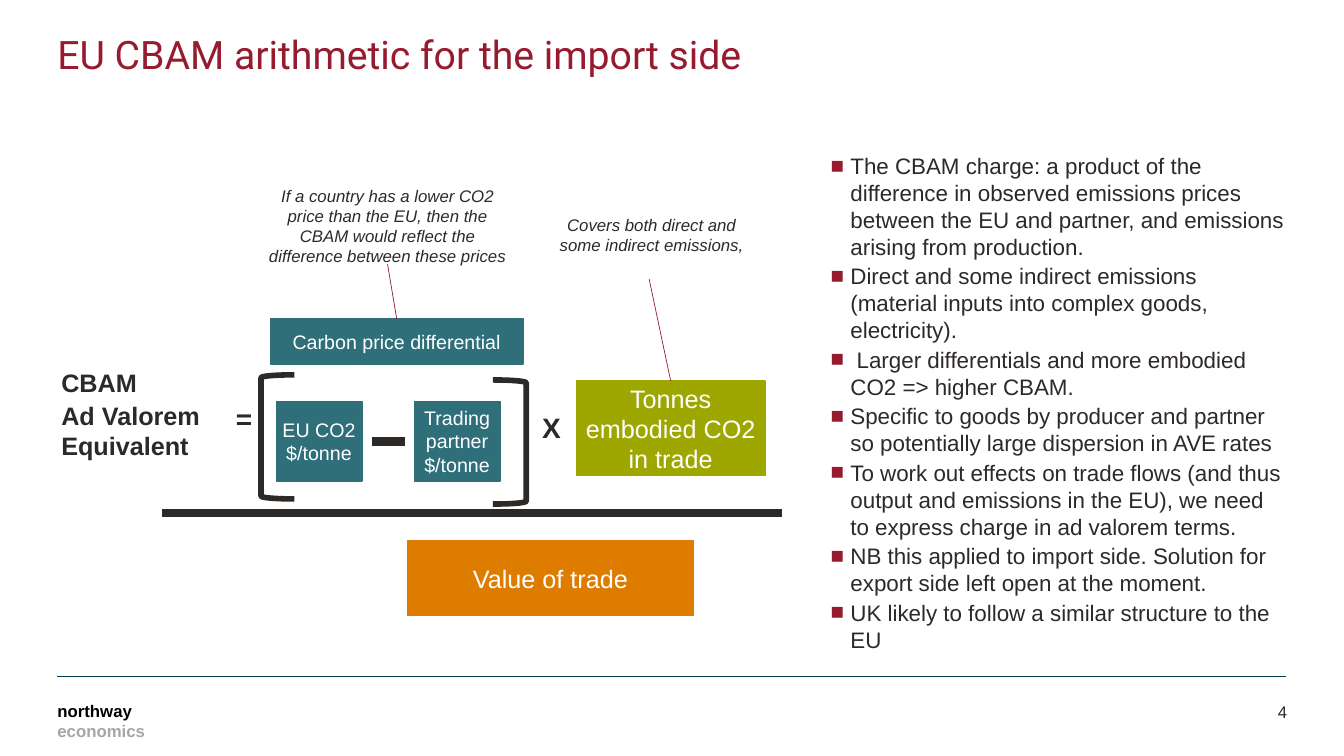
from lxml.etree import SubElement
from pptx import Presentation
from pptx.dml.color import RGBColor
from pptx.enum.shapes import MSO_CONNECTOR, MSO_SHAPE
from pptx.enum.text import MSO_ANCHOR, MSO_AUTO_SIZE, PP_ALIGN
from pptx.oxml.ns import qn
from pptx.util import Pt

COLORS = {
    "ink": "2D2926", "red": "971B2F", "teal": "2F6F7A", "green": "9EA700",
    "orange": "DE7C00", "white": "FFFFFF", "footer": "003D4C",
    "black": "000000", "grey": "A6A6A6",
}
TITLE = "EU CBAM arithmetic for the import side"
BULLETS = [
    "The CBAM charge: a product of the difference in observed emissions prices "
    "between the EU and partner, and emissions arising from production.",
    "Direct and some indirect emissions (material inputs into complex goods, electricity).",
    " Larger differentials and more embodied CO2 => higher CBAM.",
    "Specific to goods by producer and partner so potentially large dispersion in AVE rates",
    "To work out effects on trade flows (and thus output and emissions in the EU), "
    "we need to express charge in ad valorem terms.",
    "NB this applied to import side. Solution for export side left open at the moment.",
    "UK likely to follow a similar structure to the EU",
]
# name: (text, color, size, (left, top, width, height))
BOXES = {
    "differential": ("Carbon price differential", "teal", 14, (193, 227.5, 180.7, 32.4)),
    "tonnes": ("Tonnes embodied CO2 in trade", "green", 18, (411.8, 272.2, 134.6, 67.7)),
    "value": ("Value of trade", "orange", 18, (290.9, 386.6, 204.5, 53.3)),
    "eu": ("EU CO2 $/tonne", "teal", 14, (197.3, 286.6, 61.2, 56.9)),
    "partner": ("Trading partner $/tonne", "teal", 14, (295.9, 286.6, 61.2, 56.9)),
}
# lines of text, size, (left, top, width, height)
TERMS = [
    (["CBAM", "Ad Valorem Equivalent"], 18, (41, 259.2, 157.7, 87.1)),
    (["X"], 20, (384.5, 290.2, 58.3, 35.3)),
    (["="], 20, (165.6, 283.7, 58.3, 35.3)),
]
NOTES = {
    "differential": ("If a country has a lower CO2 price than the EU, then the CBAM "
                     "would reflect the difference between these prices",
                     (186.5, 132.5, 180.7, 56.2)),
    "tonnes": ("Covers both direct and some indirect emissions,",
               (389.5, 153.4, 151.9, 56.2)),
}
# left, top, rotation
BRACKETS = [(186.5, 267.8, 0), (352.1, 271.4, 180)]
BRACKET_SIZE = (23.8, 88.6)
# start, end, color, width
RULES = [
    ((41, 483.1), (918.7, 483.1), "footer", 1),
    ((115.9, 366.5), (558.7, 366.5), "ink", 6),
    ((265.7, 315.4), (289.4, 315.4), "ink", 6),
]
TONNES_NOTE_TIP = (463.7, 199.4)
FOOTER = [("northway ", "black"), ("economics", "grey")]

prs = Presentation()
prs.slide_width, prs.slide_height = Pt(960), Pt(540)
s = prs.slides.add_slide(prs.slide_layouts[5])


def rgb(name):
    return RGBColor.from_string(COLORS[name])


def pts(values):
    return [Pt(v) for v in values]


def setup_frame(tf, margins, anchor=MSO_ANCHOR.TOP):
    tf.word_wrap = True
    tf.auto_size = MSO_AUTO_SIZE.NONE
    tf.vertical_anchor = anchor
    tf.margin_left, tf.margin_top, tf.margin_right, tf.margin_bottom = pts(margins)


def style(p, size, color, align=PP_ALIGN.LEFT, after=0, font="Arial", bold=False, italic=False):
    p.alignment = align
    p.space_before, p.space_after = Pt(0), Pt(after)
    for r in p.runs:
        f = r.font
        f.name, f.size, f.bold, f.italic = font, Pt(size), bold, italic
        f.color.rgb = rgb(color)


def add_text(lines, area, size, margins=(0, 0, 0, 0), anchor=MSO_ANCHOR.TOP, **look):
    sp = s.shapes.add_textbox(*pts(area))
    tf = sp.text_frame
    setup_frame(tf, margins, anchor)
    tf.text = "\n".join(lines)
    for p in tf.paragraphs:
        style(p, size, "ink", **look)
    return sp


def add_line(start, end, color, width):
    line = s.shapes.add_connector(MSO_CONNECTOR.STRAIGHT, *pts(start + end))
    line.line.color.rgb = rgb(color)
    line.line.width = Pt(width)
    SubElement(line._element.spPr, qn("a:effectLst"))
    return line


def add_bullet(p, indent):
    pPr = p._p.get_or_add_pPr()
    pPr.set("marL", str(Pt(indent)))
    pPr.set("indent", str(-Pt(indent)))
    clr = SubElement(pPr, qn("a:buClr"))
    SubElement(clr, qn("a:srgbClr"), val=COLORS["red"])
    SubElement(pPr, qn("a:buFont"), typeface="Arial")
    SubElement(pPr, qn("a:buChar"), char="■")


title = s.shapes.title
title.left, title.top, title.width, title.height = pts((41, 21.6, 877.7, 67.7))
setup_frame(title.text_frame, (0, 0, 0, 0))
title.text_frame.text = TITLE
style(title.text_frame.paragraphs[0], 28, "red", font="Roboto")

body = add_text(BULLETS, (593.3, 105.1, 326.2, 382.3), 16, (0, 3.6, 0, 3.6), after=2)
for p in body.text_frame.paragraphs:
    add_bullet(p, 14.2)

for lines, size, area in TERMS:
    add_text(lines, area, size, (2.8,) * 4, after=2, bold=True)

boxes = {}
for name, (text, color, size, area) in BOXES.items():
    sp = boxes[name] = s.shapes.add_shape(MSO_SHAPE.RECTANGLE, *pts(area))
    sp.shadow.inherit = False
    sp.fill.solid()
    sp.fill.fore_color.rgb = sp.line.color.rgb = rgb(color)
    sp.line.width = Pt(1)
    setup_frame(sp.text_frame, (2.8,) * 4, MSO_ANCHOR.MIDDLE)
    sp.text_frame.text = text
    style(sp.text_frame.paragraphs[0], size, "white", PP_ALIGN.CENTER)

for left, top, rotation in BRACKETS:
    sp = s.shapes.add_shape(MSO_SHAPE.LEFT_BRACKET, *pts((left, top) + BRACKET_SIZE))
    sp.shadow.inherit = False
    sp.fill.background()
    sp.line.color.rgb = rgb("ink")
    sp.line.width = Pt(4)
    sp.rotation = rotation

for rule in RULES:
    add_line(*rule)

for name, (text, area) in NOTES.items():
    note = add_text([text], area, 12, align=PP_ALIGN.CENTER, italic=True)
    leader = add_line(TONNES_NOTE_TIP, TONNES_NOTE_TIP, "red", 0.5)
    if name == "differential":
        leader.begin_connect(note, 2)
    leader.end_connect(boxes[name], 0)

add_text(["4"], (691.9, 493.9, 227.5, 28.8), 12, anchor=MSO_ANCHOR.MIDDLE, align=PP_ALIGN.RIGHT)

footer = add_text([""], (41, 496.8, 115.9, 21.6), 12, (0, 3.6, 0, 3.6))
p = footer.text_frame.paragraphs[0]
for text, color in FOOTER:
    p.add_run().text = text
style(p, 12, "black", bold=True)
for r, (text, color) in zip(p.runs, FOOTER):
    r.font.color.rgb = rgb(color)

prs.save("out.pptx")
